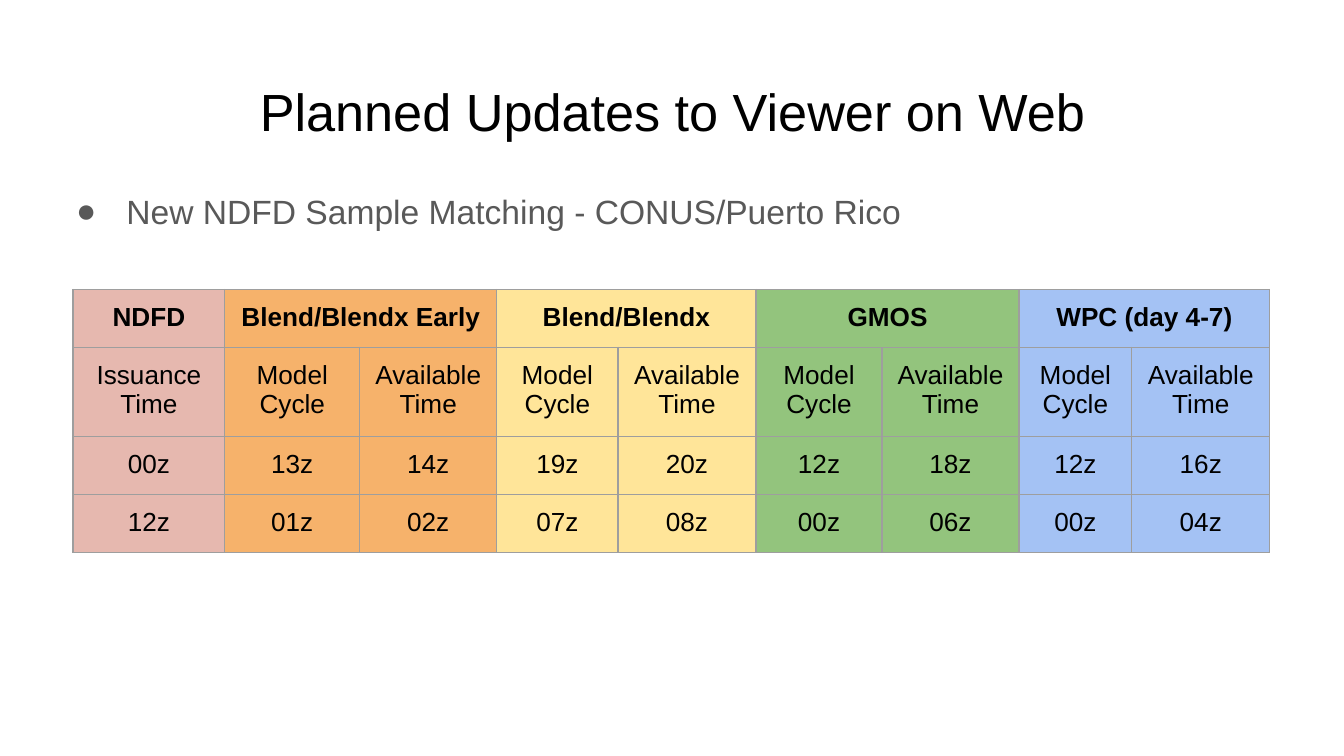
from lxml import etree
from pptx import Presentation
from pptx.dml.color import RGBColor
from pptx.enum import text
from pptx.oxml import ns
from pptx.util import Cm, Pt

FONT = "Arial"
INSET = Cm(0.25)
BORDER = "9E9E9E"

# Heading, fill, column widths in cm, rows below the heading
GROUPS = [
    ("NDFD", "E6B8AF", [2.87],
     [["Issuance Time"], ["00z"], ["12z"]]),
    ("Blend/Blendx Early", "F6B26B", [2.55, 2.59],
     [["Model Cycle", "Available Time"], ["13z", "14z"], ["01z", "02z"]]),
    ("Blend/Blendx", "FFE599", [2.29, 2.61],
     [["Model Cycle", "Available Time"], ["19z", "20z"], ["07z", "08z"]]),
    ("GMOS", "93C47D", [2.38, 2.59],
     [["Model Cycle", "Available Time"], ["12z", "18z"], ["00z", "06z"]]),
    ("WPC (day 4-7)", "A4C2F4", [2.13, 2.61],
     [["Model Cycle", "Available Time"], ["12z", "16z"], ["00z", "04z"]]),
]
ROW_HEIGHTS = [1.06, 1.6, 1.06, 1.06]


def colour(value):
    return RGBColor.from_string(value)


def set_insets(holder):
    holder.margin_left = holder.margin_right = INSET
    holder.margin_top = holder.margin_bottom = INSET


def write(para, words, size, ink="000000", bold=False):
    span = para.add_run()
    span.text = words
    span.font.name = FONT
    span.font.size = Pt(size)
    span.font.bold = bold
    span.font.color.rgb = colour(ink)


def add_bullet(para, mark, ink, indent, hang):
    props = para._p.get_or_add_pPr()
    props.set("marL", str(indent))
    props.set("indent", str(-hang))
    tint = etree.SubElement(props, ns.qn("a:buClr"))
    etree.SubElement(tint, ns.qn("a:srgbClr"), val=ink)
    etree.SubElement(props, ns.qn("a:buFont"), typeface=FONT)
    etree.SubElement(props, ns.qn("a:buChar"), char=mark)


def add_borders(cell):
    props = cell._tc.get_or_add_tcPr()
    for index, side in enumerate(("lnL", "lnR", "lnT", "lnB")):
        line = etree.Element(ns.qn(f"a:{side}"), w=str(Pt(0.75)))
        fill = etree.SubElement(line, ns.qn("a:solidFill"))
        etree.SubElement(fill, ns.qn("a:srgbClr"), val=BORDER)
        props.insert(index, line)


def place_title(page, left, top, width, height):
    title = page.shapes.title
    title.left, title.top, title.width, title.height = left, top, width, height
    frame = title.text_frame
    set_insets(frame)
    frame.auto_size = text.MSO_AUTO_SIZE.NONE
    frame.vertical_anchor = text.MSO_ANCHOR.TOP
    para = frame.paragraphs[0]
    para.alignment = text.PP_ALIGN.CENTER
    write(para, "Planned Updates to Viewer on Web", 28)


def place_point(page, left, top, width, height):
    box = page.shapes.add_textbox(left, top, width, height)
    frame = box.text_frame
    frame.word_wrap = True
    set_insets(frame)
    para = frame.paragraphs[0]
    para.line_spacing = 1.15
    add_bullet(para, "●", "595959", Cm(1.27), Cm(0.95))
    write(para, "New NDFD Sample Matching - CONUS/Puerto Rico", 18, "595959")


def fill_cell(cell, words, fill, bold):
    cell.fill.solid()
    cell.fill.fore_color.rgb = colour(fill)
    set_insets(cell)
    add_borders(cell)
    if words:
        para = cell.text_frame.paragraphs[0]
        para.alignment = text.PP_ALIGN.CENTER
        write(para, words, 14, bold=bold)


def place_schedule(page, left, top):
    widths = [width for group in GROUPS for width in group[2]]
    table = page.shapes.add_table(
        len(ROW_HEIGHTS), len(widths), left, top,
        Cm(sum(widths)), Cm(sum(ROW_HEIGHTS))).table
    table.first_row = table.horz_banding = False
    for column, width in zip(table.columns, widths):
        column.width = Cm(width)
    for row, height in zip(table.rows, ROW_HEIGHTS):
        row.height = Cm(height)

    first = 0
    for heading, fill, group_widths, body in GROUPS:
        count = len(group_widths)
        rows = [[heading] + [""] * (count - 1)] + body
        for r, row in enumerate(rows):
            for c, words in enumerate(row, first):
                fill_cell(table.cell(r, c), words, fill, bold=r == 0)
        if count > 1:
            table.cell(0, first).merge(table.cell(0, first + count - 1))
        first += count


def main():
    deck = Presentation()
    deck.slide_width, deck.slide_height = Cm(25.4), Cm(14.29)
    page = deck.slides.add_slide(deck.slide_layouts[5])
    place_title(page, Cm(0.87), Cm(1.24), Cm(23.67), Cm(1.6))
    place_point(page, Cm(0.87), Cm(3.25), Cm(23.67), Cm(1.2))
    place_schedule(page, Cm(1.38), Cm(5.47))
    deck.save("out.pptx")


if __name__ == "__main__":
    main()
